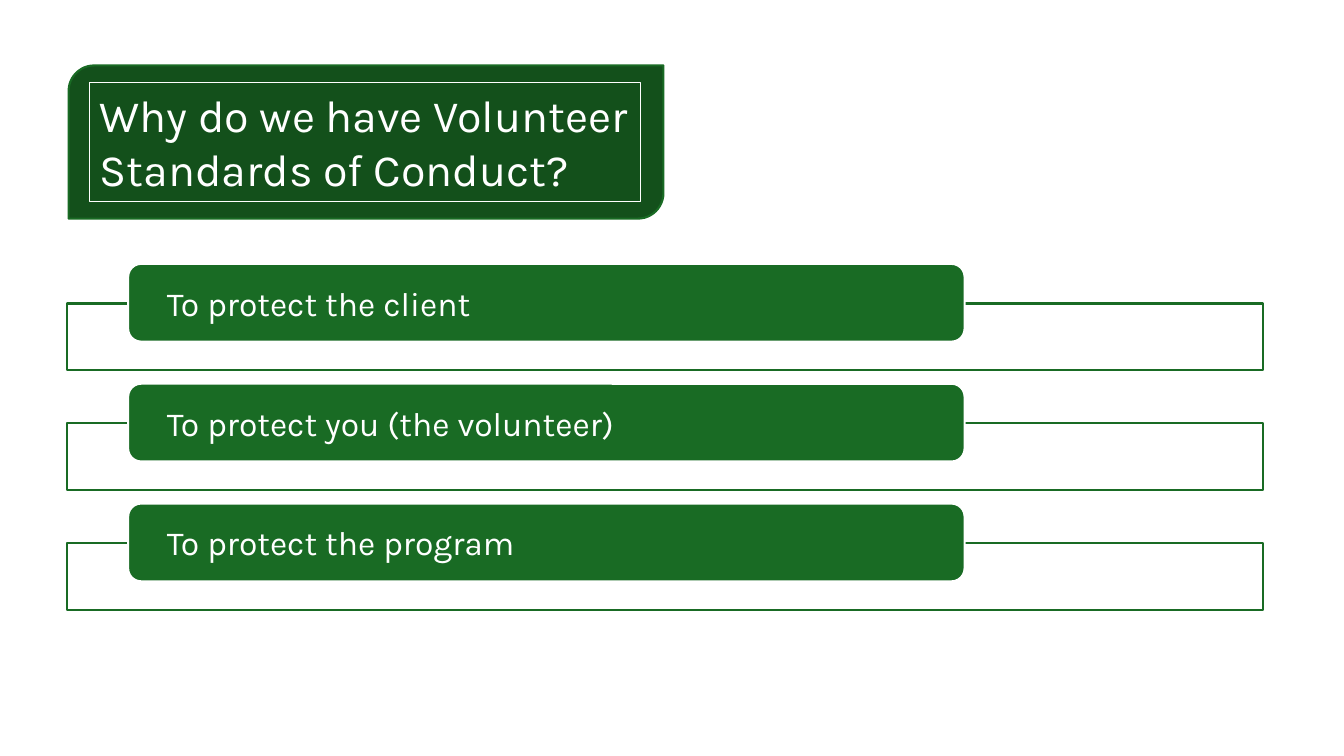
from lxml import etree
from pptx import Presentation
from pptx.dml.color import RGBColor
from pptx.enum.shapes import MSO_SHAPE
from pptx.enum.text import MSO_ANCHOR, MSO_AUTO_SIZE, PP_ALIGN
from pptx.oxml.ns import qn
from pptx.util import Cm, Pt

RECTANGLE = MSO_SHAPE.RECTANGLE
ROUNDED = MSO_SHAPE.ROUNDED_RECTANGLE
DIAGONAL = MSO_SHAPE.ROUND_2_DIAG_RECTANGLE
TOP, MIDDLE = MSO_ANCHOR.TOP, MSO_ANCHOR.MIDDLE
LEFT = PP_ALIGN.LEFT
NO_FIT = MSO_AUTO_SIZE.NONE

GREEN = RGBColor(0x19, 0x6B, 0x24)
DARK_GREEN = RGBColor(0x13, 0x50, 0x1B)
WHITE = RGBColor(0xFF, 0xFF, 0xFF)

TITLE = "Why do we have Volunteer Standards of Conduct?"
REASONS = [
    "To protect the client",
    "To protect you (the volunteer)",
    "To protect the program",
]
FIRST_TOP, PITCH = 6.65, 3.02


def write(box, text, size, font="Karla", color=WHITE, anchor=MIDDLE,
          side=0.25, edge=0.13):
    """Put one left-aligned paragraph in a box; insets are in centimetres."""
    frame = box.text_frame
    frame.word_wrap = True
    frame.auto_size = NO_FIT
    frame.vertical_anchor = anchor
    frame.margin_left = frame.margin_right = Cm(side)
    frame.margin_top = frame.margin_bottom = Cm(edge)
    para = frame.paragraphs[0]
    para.alignment = LEFT
    para.line_spacing = 1.0
    span = para.add_run()
    span.text = text
    span.font.name = font
    span.font.size = Pt(size)
    span.font.color.rgb = color


class SlideBuilder:
    """Holds the page and draws its elements in the deck's style."""

    def __init__(self, page):
        self.page = page

    def shape(self, kind, left, top, width, height, fill, line, opacity=100):
        box = self.page.shapes.add_shape(
            kind, Cm(left), Cm(top), Cm(width), Cm(height))
        box.shadow.inherit = False
        box.fill.solid()
        box.fill.fore_color.rgb = fill
        if opacity < 100:
            color = box.fill._xPr.find(qn("a:solidFill"))[0]
            etree.SubElement(color, qn("a:alpha"), val=str(opacity * 1000))
        box.line.color.rgb = line
        box.line.width = Pt(1.5)
        return box

    def reason(self, text, top):
        self.shape(RECTANGLE, 1.7, top + 1, 30.12, 1.68, WHITE, GREEN, opacity=90)
        bar = self.shape(ROUNDED, 3.23, top, 21.08, 1.96, GREEN, WHITE)
        write(bar, text, 24, side=0.88, edge=0)

    def title(self, text):
        self.shape(DIAGONAL, 1.73, 1.65, 14.99, 3.86, DARK_GREEN, GREEN)
        title = self.page.shapes.title
        title.left, title.top = Cm(2.26), Cm(2.08)
        title.width, title.height = Cm(13.89), Cm(3)
        title.line.color.rgb = WHITE
        title.line.width = Pt(0.75)
        write(title, text, 32, anchor=TOP)
        # Bring the title in front of its banner
        self.page.shapes._spTree.append(title._element)


def main():
    deck = Presentation()
    deck.slide_width, deck.slide_height = Cm(33.87), Cm(19.05)
    builder = SlideBuilder(deck.slides.add_slide(deck.slide_layouts[5]))

    # Reasons
    for index, text in enumerate(REASONS):
        builder.reason(text, FIRST_TOP + index * PITCH)

    # Title banner
    builder.title(TITLE)

    deck.save("out.pptx")


if __name__ == "__main__":
    main()
